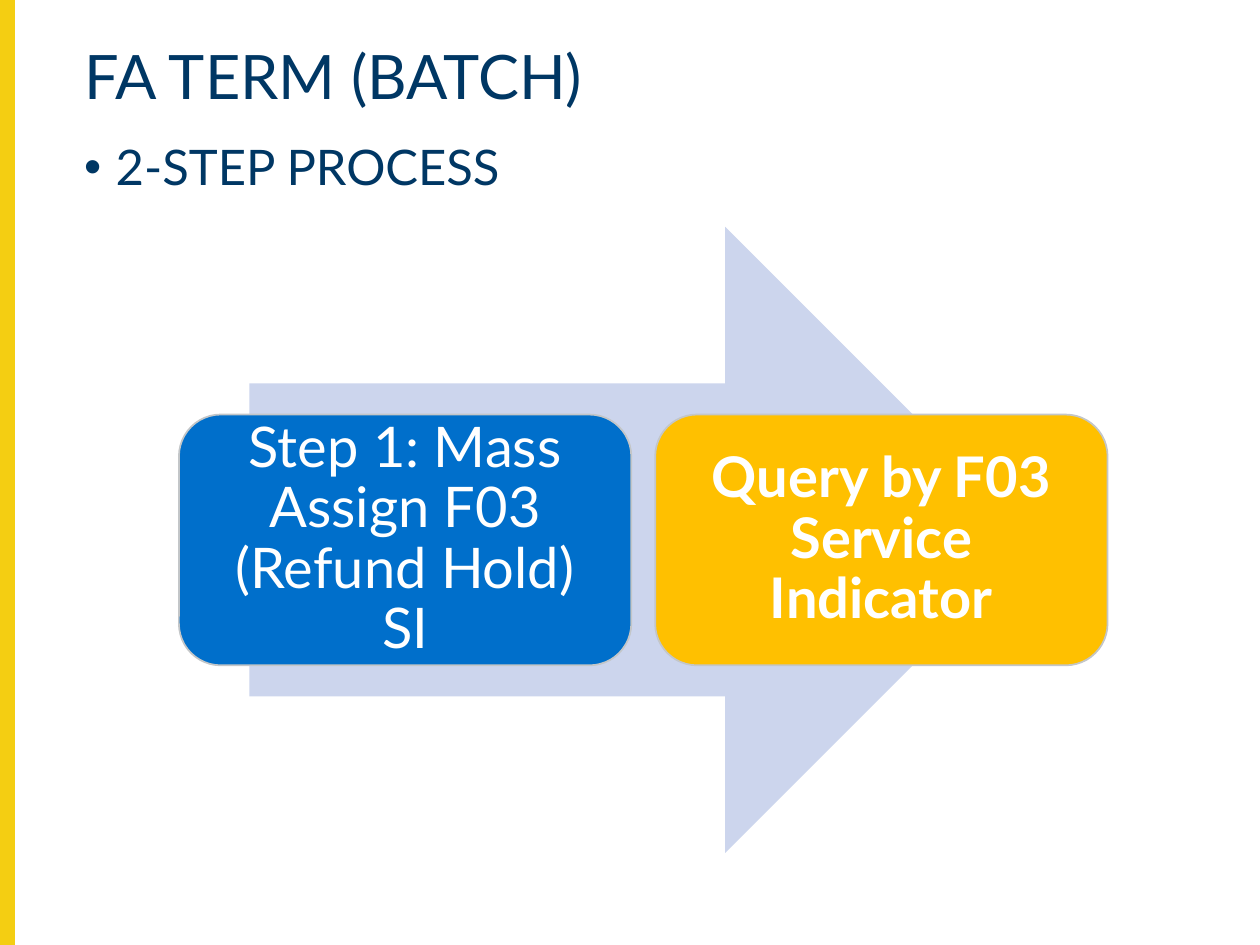
"""Build the FA Term (Batch) two-step process slide."""
from dataclasses import dataclass
from typing import Any

from pptx import Presentation
from pptx.dml.color import RGBColor
from pptx.enum.shapes import MSO_SHAPE
from pptx.enum.text import MSO_ANCHOR, MSO_AUTO_SIZE, PP_ALIGN
from pptx.oxml import parse_xml
from pptx.oxml.ns import nsdecls
from pptx.util import Inches, Pt


@dataclass(frozen=True)
class Theme:
    font: str = "Lato"
    navy: str = "003764"
    white: str = "FFFFFF"
    stripe: str = "F4CE12"
    arrow: str = "CCD5ED"
    outline: str = "C3C6C8"
    blue: str = "006FCB"
    gold: str = "FFC000"
    title_size: int = 35
    bullet_size: int = 28
    step_size: int = 32


@dataclass(frozen=True)
class Box:
    left: float
    top: float
    width: float
    height: float

    def lengths(self) -> tuple:
        return tuple(Inches(value) for value in (self.left, self.top, self.width, self.height))


@dataclass(frozen=True)
class Step:
    text: str
    fill: str
    bold: bool


THEME = Theme()
STEPS = (
    Step("Step 1: Mass Assign F03 (Refund Hold) SI", THEME.blue, False),
    Step("Query by F03 Service Indicator", THEME.gold, True),
)
FIRST_STEP = Box(1.42, 3.29, 3.59, 1.99)
STEP_GAP = 0.19


def apply_format(target: Any, values: dict[str, Any]) -> None:
    for name, value in values.items():
        setattr(target, name, value)


def write_text(shape: Any, text: str, size: int, color: str, frame: dict[str, Any],
               layout: dict[str, Any], bold: bool = False) -> Any:
    text_frame = shape.text_frame
    apply_format(text_frame, {"word_wrap": True, "auto_size": MSO_AUTO_SIZE.NONE} | frame)
    paragraph = text_frame.paragraphs[0]
    apply_format(paragraph, {"line_spacing": 0.9} | layout)
    run = paragraph.add_run()
    run.text = text
    apply_format(run.font, {"name": THEME.font, "size": Pt(size), "bold": bold})
    run.font.color.rgb = RGBColor.from_string(color)
    return paragraph


def add_filled_shape(slide: Any, kind: MSO_SHAPE, box: Box, fill: str,
                     outline: str | None = None) -> Any:
    shape = slide.shapes.add_shape(kind, *box.lengths())
    shape.shadow.inherit = False
    shape.fill.solid()
    shape.fill.fore_color.rgb = RGBColor.from_string(fill)
    if outline:
        shape.line.color.rgb = RGBColor.from_string(outline)
        shape.line.width = Pt(1)
    else:
        shape.line.fill.background()
    return shape


def add_title(slide: Any, text: str, box: Box) -> None:
    title = slide.shapes.title
    apply_format(title, dict(zip(("left", "top", "width", "height"), box.lengths())))
    write_text(title, text, THEME.title_size, THEME.navy,
               {"vertical_anchor": MSO_ANCHOR.TOP}, {"alignment": PP_ALIGN.LEFT})


def add_bullet(slide: Any, text: str, box: Box) -> None:
    shape = slide.shapes.add_textbox(*box.lengths())
    paragraph = write_text(shape, text, THEME.bullet_size, THEME.navy,
                           {"vertical_anchor": MSO_ANCHOR.TOP}, {"space_before": Pt(10)})
    properties = paragraph._p.get_or_add_pPr()
    apply_format_xml = {"marL": Inches(0.25), "indent": Inches(-0.25)}
    for name, value in apply_format_xml.items():
        properties.set(name, str(value))
    properties.append(parse_xml(f'<a:buFont {nsdecls("a")} typeface="Arial"/>'))
    properties.append(parse_xml(f'<a:buChar {nsdecls("a")} char="•"/>'))


def add_step(slide: Any, step: Step, box: Box) -> None:
    shape = add_filled_shape(slide, MSO_SHAPE.ROUNDED_RECTANGLE, box, step.fill, THEME.outline)
    sides = ("left", "right", "top", "bottom")
    frame = {f"margin_{side}": Inches(0.23) for side in sides}
    write_text(shape, step.text, THEME.step_size, THEME.white,
               frame | {"vertical_anchor": MSO_ANCHOR.MIDDLE},
               {"alignment": PP_ALIGN.CENTER}, step.bold)


def main() -> None:
    presentation = Presentation()
    apply_format(presentation, {"slide_width": Inches(10), "slide_height": Inches(7.5)})
    slide = presentation.slides.add_slide(presentation.slide_layouts[5])
    add_filled_shape(slide, MSO_SHAPE.RECTANGLE, Box(0, 0, 0.11, 7.5), THEME.stripe, THEME.stripe)
    add_title(slide, "FA TERM (BATCH)", Box(0.57, 0.32, 9.08, 0.86))
    add_bullet(slide, "2-STEP PROCESS", Box(0.57, 1.09, 9.12, 5.72))
    add_filled_shape(slide, MSO_SHAPE.RIGHT_ARROW, Box(1.98, 1.8, 6.26, 4.97), THEME.arrow)
    for index, step in enumerate(STEPS):
        left = FIRST_STEP.left + index * (FIRST_STEP.width + STEP_GAP)
        add_step(slide, step, Box(left, FIRST_STEP.top, FIRST_STEP.width, FIRST_STEP.height))
    presentation.save("out.pptx")


if __name__ == "__main__":
    main()
